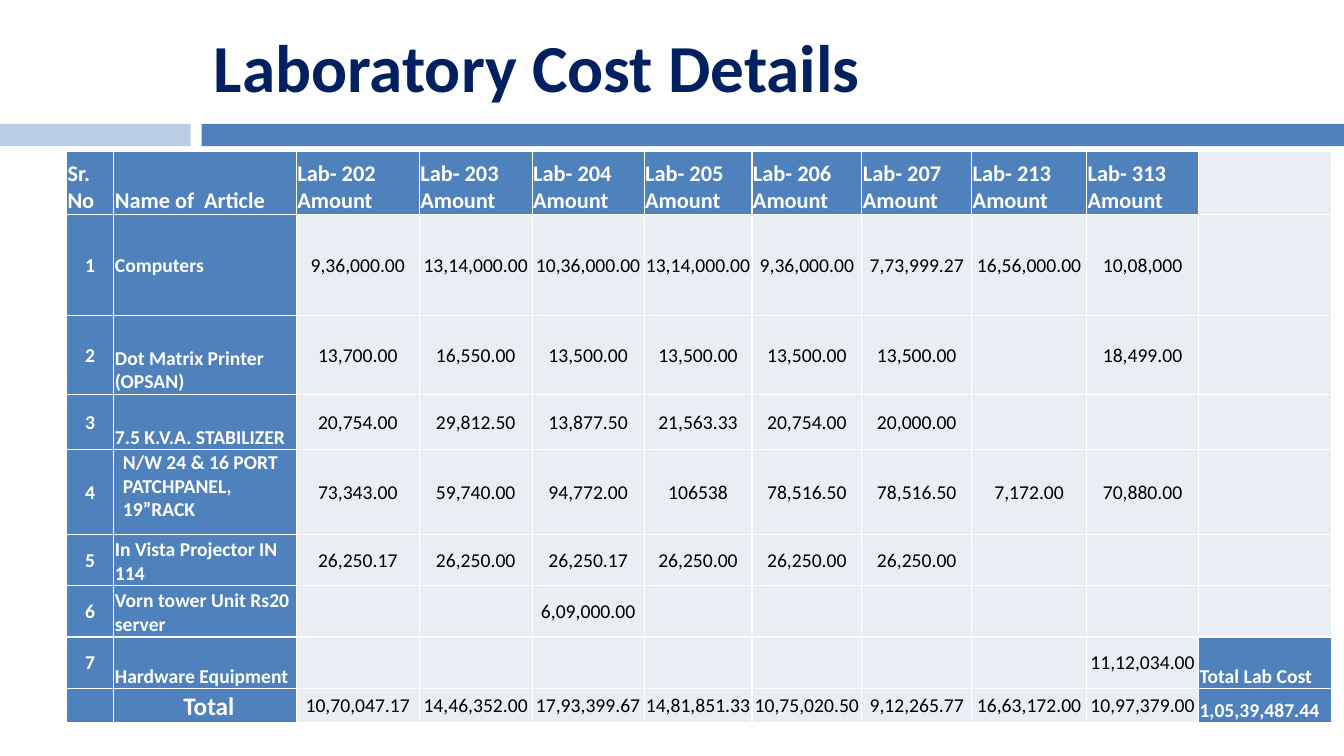
"""Build the laboratory cost details slide."""
import lxml.etree
import pptx
import pptx.dml.color
import pptx.enum.shapes
import pptx.enum.text
import pptx.oxml.ns
import pptx.util

Inches = pptx.util.Inches
Pt = pptx.util.Pt
Align = pptx.enum.text.PP_ALIGN
Anchor = pptx.enum.text.MSO_ANCHOR

BLUE, LIGHT_BLUE, PALE, NAVY = "4F81BD", "B9CDE5", "E9EDF4", "002060"
WHITE, BLACK = "FFFFFF", "000000"

COLUMN_WIDTHS = [0.47, 1.81, 1.22, 1.12, 1.11, 1.07, 1.09, 1.09, 1.14, 1.11, 1.32]
ROW_HEIGHTS = [0.63, 1, 0.78, 0.55, 0.84, 0.51, 0.51, 0.51, 0.34]
LABS = [202, 203, 204, 205, 206, 207, 213, 313]
ARTICLES = [
    ("Computers", "9,36,000.00", "13,14,000.00", "10,36,000.00", "13,14,000.00",
     "9,36,000.00", "7,73,999.27", "16,56,000.00", "10,08,000", ""),
    ("Dot Matrix Printer (OPSAN)", "13,700.00", "16,550.00", "13,500.00", "13,500.00",
     "13,500.00", "13,500.00", "", "18,499.00", ""),
    ("7.5 K.V.A. STABILIZER", "20,754.00", "29,812.50", "13,877.50", "21,563.33",
     "20,754.00", "20,000.00", "", "", ""),
    ("N/W 24 & 16 PORT PATCHPANEL, 19”RACK", "73,343.00", "59,740.00", "94,772.00", "106538",
     "78,516.50", "78,516.50", "7,172.00", "70,880.00", ""),
    ("In Vista Projector IN 114", "26,250.17", "26,250.00", "26,250.17", "26,250.00",
     "26,250.00", "26,250.00", "", "", ""),
    ("Vorn tower Unit Rs20 server", "", "", "6,09,000.00", "", "", "", "", "", ""),
    ("Hardware Equipment", "", "", "", "", "", "", "", "11,12,034.00", "Total Lab Cost"),
]
TOTALS = ["", "Total", "10,70,047.17", "14,46,352.00", "17,93,399.67", "14,81,851.33",
          "10,75,020.50", "9,12,265.77", "16,63,172.00", "10,97,379.00", "1,05,39,487.44"]


def color(value):
    """Turn a hex string into a colour."""
    return pptx.dml.color.RGBColor.from_string(value)


def assign(target, values):
    """Set each named attribute on the target."""
    for name, value in values.items():
        setattr(target, name, value)


class SlideBuilder:
    """Hold the slide and its style, and add each kind of element."""

    font_name = "Calibri"
    cell_margins = {"margin_left": Inches(0.01), "margin_top": Inches(0.01),
                    "margin_right": Inches(0.01), "margin_bottom": 0}

    def __init__(self, slide):
        """Keep the current slide."""
        self.slide = slide

    def add_text(self, paragraph, text, size, text_color, bold):
        """Put one formatted run in a paragraph."""
        run = paragraph.add_run()
        run.text = text
        assign(run.font, {"name": self.font_name, "size": Pt(size), "bold": bold})
        run.font.color.rgb = color(text_color)

    def bar(self, left, top, width, height, fill):
        """Add a plain rectangle."""
        shape = self.slide.shapes.add_shape(
            pptx.enum.shapes.MSO_SHAPE.RECTANGLE,
            Inches(left), Inches(top), Inches(width), Inches(height))
        shape.shadow.inherit = False
        shape.fill.solid()
        shape.fill.fore_color.rgb = color(fill)
        shape.line.fill.background()

    def title(self, text, left, top, width, height):
        """Add the slide heading."""
        box = self.slide.shapes.add_textbox(
            Inches(left), Inches(top), Inches(width), Inches(height))
        assign(box.text_frame, {
            "word_wrap": True, "vertical_anchor": Anchor.MIDDLE,
            "margin_left": Inches(0.12), "margin_right": Inches(0.12),
            "margin_top": Inches(0.06), "margin_bottom": Inches(0.06)})
        self.add_text(box.text_frame.paragraphs[0], text, 48, NAVY, True)

    def borders(self, cell):
        """Draw thin white lines on the four sides of a cell."""
        properties = cell._tc.get_or_add_tcPr()
        for side in ("lnL", "lnR", "lnT", "lnB"):
            line = lxml.etree.SubElement(
                properties, pptx.oxml.ns.qn(f"a:{side}"), w=str(Pt(1)))
            fill = lxml.etree.SubElement(line, pptx.oxml.ns.qn("a:solidFill"))
            lxml.etree.SubElement(fill, pptx.oxml.ns.qn("a:srgbClr"), val=WHITE)

    def cell(self, cell, text, dark, size, align, layout):
        """Fill and format one table cell."""
        self.borders(cell)
        cell.fill.solid()
        cell.fill.fore_color.rgb = color(BLUE if dark else PALE)
        assign(cell, {**self.cell_margins, **layout})
        if text:
            paragraph = cell.text_frame.paragraphs[0]
            paragraph.alignment = align
            self.add_text(paragraph, text, size, WHITE if dark else BLACK, dark)

    def table(self, rows, left, top, widths, heights, format_of):
        """Add a table whose cell formats follow from their positions."""
        table = self.slide.shapes.add_table(
            len(rows), len(widths), Inches(left), Inches(top),
            Inches(sum(widths)), Inches(sum(heights))).table
        assign(table, {"first_row": False, "horz_banding": False})
        for column, width in zip(table.columns, widths):
            column.width = Inches(width)
        for row, height in zip(table.rows, heights):
            row.height = Inches(height)
        for row_index, values in enumerate(rows):
            for column_index, text in enumerate(values):
                self.cell(table.cell(row_index, column_index), text,
                          **format_of(row_index, column_index, text))


def cost_format(row, column, text):
    """Choose the format of a cost table cell."""
    last_row, last_column = len(ROW_HEIGHTS) - 1, len(COLUMN_WIDTHS) - 1
    header = row == 0
    dark = column < 2 or (header and column < last_column) or (column == last_column and text != "")
    centered = not header and column not in (1, last_column)
    layout = {"vertical_anchor": Anchor.MIDDLE if centered else Anchor.BOTTOM}
    size = 16 if header else 14
    if column == 1:
        if row == 1:
            layout["vertical_anchor"] = Anchor.MIDDLE
        elif row == 4:
            layout = {"vertical_anchor": Anchor.TOP, "margin_left": Inches(0.09)}
        elif row == last_row:
            layout["margin_left"] = Inches(0.69)
            size = 18
    return {"dark": dark, "size": size, "layout": layout,
            "align": Align.CENTER if centered else Align.LEFT}


def main():
    """Create and save the presentation."""
    presentation = pptx.Presentation()
    assign(presentation, {"slide_width": Inches(13.33), "slide_height": Inches(7.5)})
    builder = SlideBuilder(presentation.slides.add_slide(presentation.slide_layouts[6]))
    builder.bar(0, 1.23, 1.89, 0.22, LIGHT_BLUE)
    builder.bar(2, 1.23, 11.33, 0.22, BLUE)
    builder.title("Laboratory Cost Details", 2, 0.15, 11.22, 1)
    header = ["Sr. No", "Name of  Article", *(f"Lab- {lab} Amount" for lab in LABS), ""]
    articles = [[str(number), *article] for number, article in enumerate(ARTICLES, 1)]
    builder.table([header, *articles, TOTALS], 0.66, 1.5,
                  COLUMN_WIDTHS, ROW_HEIGHTS, cost_format)
    presentation.save("out.pptx")


if __name__ == "__main__":
    main()
